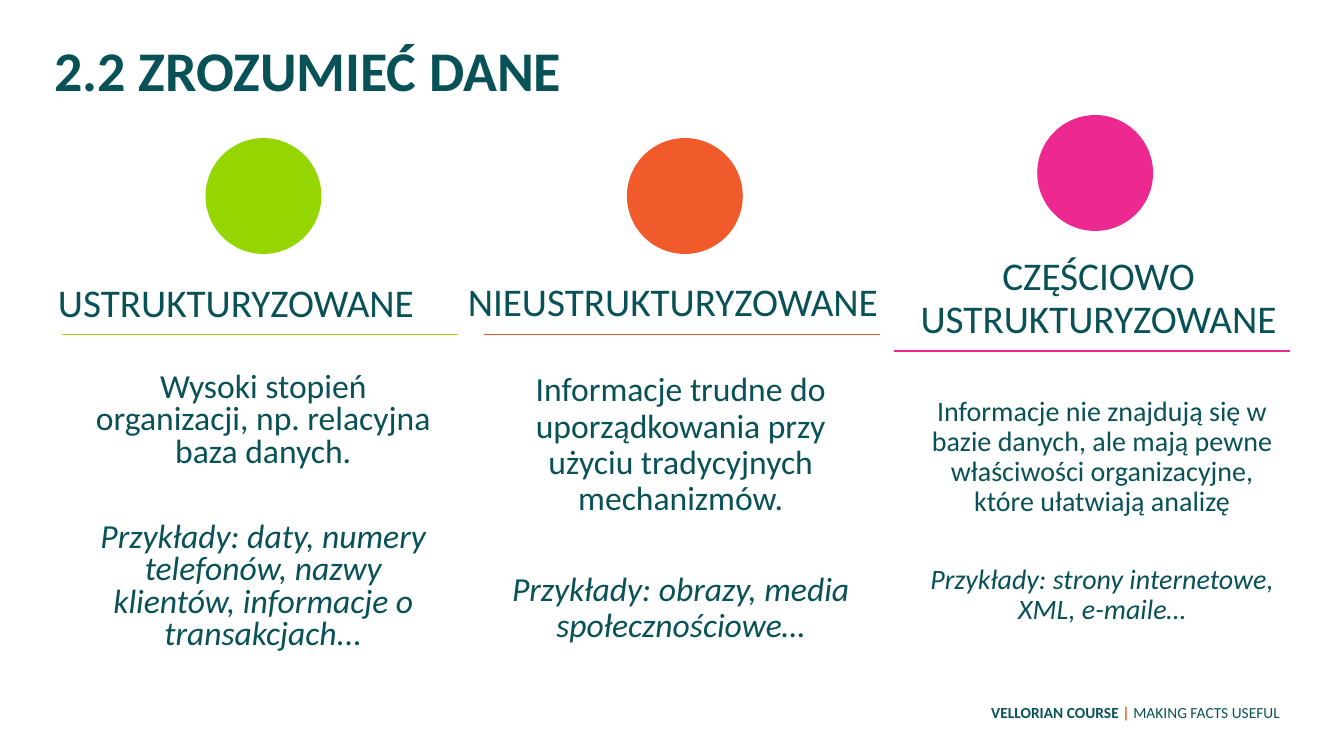
from lxml import etree
from pptx import Presentation
from pptx.dml.color import RGBColor
from pptx.enum import shapes, text
from pptx.oxml.ns import qn
from pptx.util import Cm, Pt

TEAL, GREEN, ORANGE, PINK = "085156", "95D600", "F15A2A", "ED2891"
CENTER, LEFT, RIGHT = text.PP_ALIGN.CENTER, text.PP_ALIGN.LEFT, text.PP_ALIGN.RIGHT
DIAMETER, RULE_WIDTH, CIRCLE_INSET = 2.92, 9.98, 3.61

COLUMNS = [
    dict(color=GREEN, x=1.57, circle_y=3.48, rule_y=8.43,
         heading="USTRUKTURYZOWANE", heading_box=(1.12, 7.01, 9.65, 2.9),
         body="Wysoki stopień organizacji, np. relacyjna baza danych.",
         examples="Przykłady: daty, numery telefonów, nazwy klientów, informacje o transakcjach...",
         body_box=(1.9, 9.27, 9.47, 7.49), size=24, spacing=0.8, gap=38),
    dict(color=ORANGE, x=12.19, circle_y=3.48, rule_y=8.43,
         heading="NIEUSTRUKTURYZOWANE", heading_box=(11.38, 6.99, 11.15, 2.9),
         body="Informacje trudne do uporządkowania przy użyciu tradycyjnych mechanizmów.",
         examples="Przykłady: obrazy, media społecznościowe…",
         body_box=(12.42, 9.27, 9.47, 8), size=24, spacing=0.9, gap=39),
    dict(color=PINK, x=22.53, circle_y=2.9, rule_y=8.84,
         heading="CZĘŚCIOWO USTRUKTURYZOWANE", heading_box=(22.86, 6.35, 9.65, 2.9),
         body="Informacje nie znajdują się w bazie danych, ale mają pewne właściwości "
              "organizacyjne, które ułatwiają analizę",
         examples="Przykłady: strony internetowe, XML, e-maile…",
         body_box=(23.04, 9.88, 9.47, 7.47), size=20, spacing=0.9, gap=34),
]


def rgb(value):
    return RGBColor.from_string(value)


def add_run(p, content, size=24, color=TEAL, bold=False, italic=False):
    r = p.add_run()
    r.text = content
    r.font.name = "Calibri"
    r.font.size = Pt(size)
    r.font.bold = bold
    r.font.italic = italic
    r.font.color.rgb = rgb(color)


def format_paragraph(p, align=CENTER, spacing=0.9, before=0):
    p.alignment = align
    p.line_spacing = spacing
    p.space_before = Pt(before)


def add_text_box(s, box):
    tf = s.shapes.add_textbox(*map(Cm, box)).text_frame
    tf.word_wrap = True
    return tf


def add_title(s, content):
    sp = s.shapes.title
    sp.left, sp.top, sp.width, sp.height = map(Cm, (1.12, 0.97, 33.86, 1.93))
    tf = sp.text_frame
    tf.vertical_anchor = text.MSO_ANCHOR.TOP
    tf.auto_size = text.MSO_AUTO_SIZE.NONE
    p = tf.paragraphs[0]
    format_paragraph(p, align=LEFT)
    add_run(p, content, size=40, bold=True)


def add_circle(s, x, y, color):
    sp = s.shapes.add_shape(shapes.MSO_SHAPE.OVAL, Cm(x), Cm(y), Cm(DIAMETER), Cm(DIAMETER))
    sp.shadow.inherit = False
    sp.fill.solid()
    sp.fill.fore_color.rgb = rgb(color)
    sp.line.fill.background()


def add_rule(s, x, y, color):
    line = s.shapes.add_connector(
        shapes.MSO_CONNECTOR.STRAIGHT, Cm(x + RULE_WIDTH), Cm(y), Cm(x), Cm(y))
    line.line.color.rgb = rgb(color)
    line.line.width = Pt(1)
    etree.SubElement(line._element.spPr, qn("a:effectLst"))


def add_column(s, col):
    add_circle(s, col["x"] + CIRCLE_INSET, col["circle_y"], col["color"])
    p = add_text_box(s, col["heading_box"]).paragraphs[0]
    format_paragraph(p)
    add_run(p, col["heading"], size=28)
    add_rule(s, col["x"], col["rule_y"], col["color"])
    tf = add_text_box(s, col["body_box"])
    p = tf.paragraphs[0]
    format_paragraph(p, spacing=col["spacing"])
    add_run(p, col["body"], size=col["size"])
    p = tf.add_paragraph()
    format_paragraph(p, spacing=col["spacing"], before=col["gap"])
    add_run(p, col["examples"], size=col["size"], italic=True)


def add_footer(s):
    p = add_text_box(s, (1.83, 17.6, 30.68, 1.14)).paragraphs[0]
    format_paragraph(p, align=RIGHT, spacing=1.0)
    add_run(p, "VELLORIAN COURSE ", size=11, bold=True)
    add_run(p, "| ", size=11, color=ORANGE, bold=True)
    add_run(p, "MAKING FACTS USEFUL", size=11)


def main():
    prs = Presentation()
    prs.slide_width, prs.slide_height = Cm(33.87), Cm(19.05)
    s = prs.slides.add_slide(prs.slide_layouts[5])
    add_title(s, "2.2 ZROZUMIEĆ DANE")
    for col in COLUMNS:
        add_column(s, col)
    add_footer(s)
    prs.save("out.pptx")


if __name__ == "__main__":
    main()
